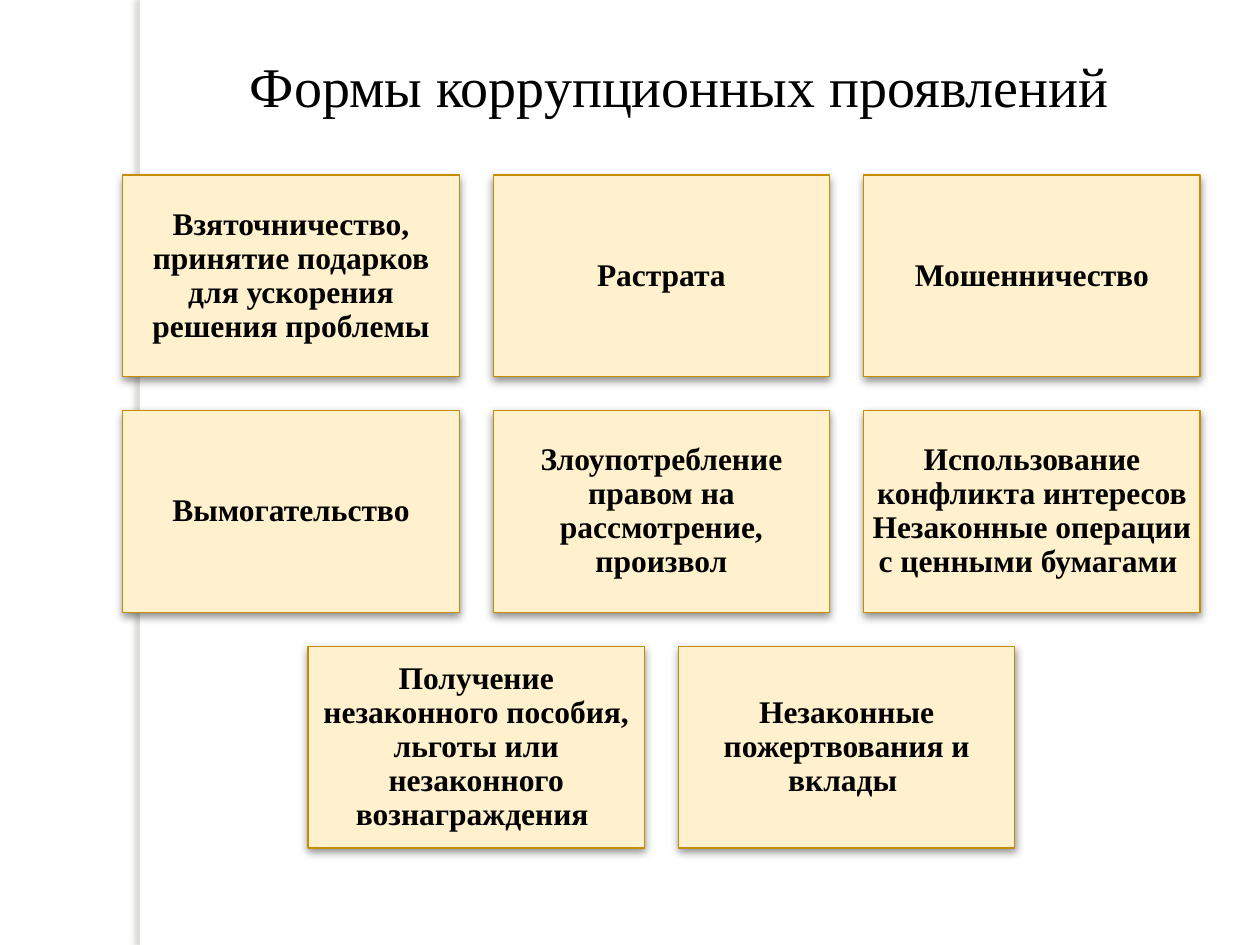
"""Build a slide with a grid of cards naming the forms of corruption."""
from lxml import etree
from pptx import Presentation
from pptx.dml.color import RGBColor
from pptx.enum.shapes import MSO_SHAPE
from pptx.enum.text import MSO_ANCHOR, PP_ALIGN
from pptx.oxml.ns import qn
from pptx.util import Inches, Pt

RECTANGLE = MSO_SHAPE.RECTANGLE
MIDDLE = MSO_ANCHOR.MIDDLE
CENTER = PP_ALIGN.CENTER
FONT = "Times New Roman"
CARD_WIDTH, CARD_HEIGHT, GAP = 2.67, 1.6, 0.27
GRID_CENTER, GRID_TOP = 5.25, 1.39
ROWS = [
    ["Взяточничество, принятие подарков для ускорения решения проблемы",
     "Растрата",
     "Мошенничество"],
    ["Вымогательство",
     "Злоупотребление правом на рассмотрение, произвол",
     "Использование конфликта интересов Незаконные операции с ценными бумагами "],
    ["Получение незаконного пособия, льготы или незаконного вознаграждения ",
     "Незаконные пожертвования и вклады "],
]


def add_box(left, top, width, height, fill, shadow):
    shape = slide.shapes.add_shape(
        RECTANGLE, Inches(left), Inches(top), Inches(width), Inches(height))
    shape.fill.solid()
    shape.fill.fore_color.rgb = RGBColor.from_string(fill)
    shape.shadow.inherit = False
    color, opacity, blur, distance, angle = shadow
    effects = shape.element.spPr.find(qn("a:effectLst"))
    outer = etree.SubElement(
        effects, qn("a:outerShdw"), blurRad=str(Pt(blur)), dist=str(Pt(distance)),
        dir=str(angle * 60000), algn="ctr", rotWithShape="0")
    tint = etree.SubElement(outer, qn("a:srgbClr"), val=color)
    etree.SubElement(tint, qn("a:alpha"), val=str(opacity * 1000))
    return shape


def write(frame, text, size, bold):
    frame.word_wrap = True
    paragraph = frame.paragraphs[0]
    paragraph.text = text
    paragraph.alignment = CENTER
    paragraph.font.name = FONT
    paragraph.font.size = Pt(size)
    paragraph.font.bold = bold
    paragraph.font.color.rgb = RGBColor.from_string("000000")
    return paragraph


presentation = Presentation()
presentation.slide_width = Inches(10)
presentation.slide_height = Inches(7.5)
slide = presentation.slides.add_slide(presentation.slide_layouts[6])

stripe = add_box(1.11, 0, 0.08, 7.5, "FFFFFF", ("736F63", 25, 3, 3, 180))
stripe.line.fill.background()

for row, texts in enumerate(ROWS):
    row_width = len(texts) * (CARD_WIDTH + GAP) - GAP
    for column, text in enumerate(texts):
        left = GRID_CENTER - row_width / 2 + column * (CARD_WIDTH + GAP)
        top = GRID_TOP + row * (CARD_HEIGHT + GAP)
        card = add_box(left, top, CARD_WIDTH, CARD_HEIGHT, "FFF1CE",
                       ("000000", 43, 5, 2, 90))
        card.line.color.rgb = RGBColor.from_string("C58D01")
        card.line.width = Pt(0.75)
        frame = card.text_frame
        frame.vertical_anchor = MIDDLE
        frame.margin_left = frame.margin_right = Inches(0.07)
        frame.margin_top = frame.margin_bottom = Inches(0.07)
        write(frame, text, 18, True).line_spacing = 0.9

title = slide.shapes.add_textbox(Inches(1.22), Inches(0.36), Inches(8.35), Inches(0.64))
write(title.text_frame, "Формы коррупционных проявлений", 32, False)

presentation.save("out.pptx")
